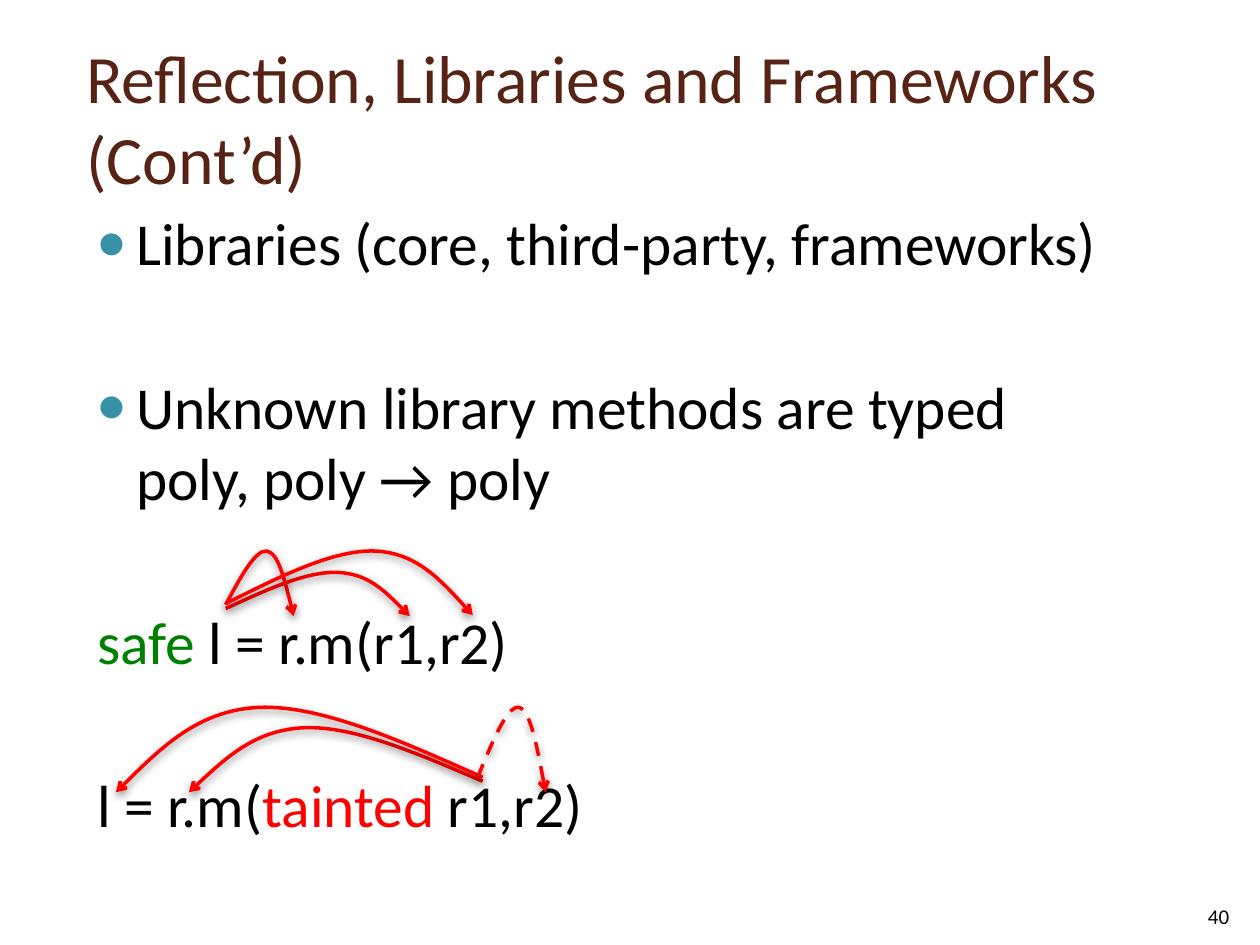
from lxml import etree
from pptx import Presentation
from pptx import util as u
from pptx.dml import color
from pptx.enum import dml, text
from pptx.oxml import ns

RED, GREEN, BLACK = "FF0000", "008000", "000000"
LEFT, WIDE = 1.48, 22.53


def paint(code):
    """Turn a hex string into a colour."""
    return color.RGBColor.from_string(code)


def put(item, vals):
    """Set each attribute of a dict of format values."""
    for key, val in vals.items():
        setattr(item, key, val)


def node(up, tag, **vals):
    """Add a drawing element below another one."""
    return etree.SubElement(up, ns.qn("a:" + tag), {k: str(v) for k, v in vals.items()})


class Deck:
    """Hold the style and the current slide."""

    face = "Calibri"

    def __init__(self):
        """Start a deck with one title-only slide."""
        self.prs = Presentation()
        put(self.prs, {"slide_width": u.Cm(25.4), "slide_height": u.Cm(19.05)})
        self.slide = self.prs.slides.add_slide(self.prs.slide_layouts[5])

    def style(self, run, size, code):
        """Format one run."""
        put(run.font, {"name": self.face, "size": u.Pt(size)})
        run.font.color.rgb = paint(code)

    def title(self, words, box):
        """Fill and place the title."""
        head = self.slide.shapes.title
        put(head, dict(zip(("left", "top", "width", "height"), map(u.Cm, box))))
        put(head.text_frame, {"text": words, "word_wrap": True,
                              "auto_size": text.MSO_AUTO_SIZE.NONE,
                              "vertical_anchor": text.MSO_ANCHOR.MIDDLE})
        para = head.text_frame.paragraphs[0]
        para.alignment = text.PP_ALIGN.LEFT
        self.style(para.runs[0], 38.7, "572314")

    def frame(self, box, **vals):
        """Add a wrapping text box."""
        area = self.slide.shapes.add_textbox(*map(u.Cm, box)).text_frame
        put(area, {"word_wrap": True, **vals})
        return area

    def body(self, items, box):
        """Add the spaced paragraphs, each with or without a bullet."""
        area = self.frame(box)
        for i, (dot, parts) in enumerate(items):
            para = area.add_paragraph() if i else area.paragraphs[0]
            para.space_before = u.Pt(52.7 if i else 6)
            props = para._p.get_or_add_pPr()
            props.set("marL", str(u.Cm(1.02 if dot else 0.23)))
            props.set("indent", str(u.Cm(-0.79 if dot else 0)))
            if dot:
                node(node(props, "buClr"), "srgbClr", val="3891A7")
                node(props, "buSzPct", val=80000)
                node(props, "buFont", typeface=self.face)
                node(props, "buChar", char="●")
            for words, code in parts:
                for j, line in enumerate(words.split("\n")):
                    if j:
                        para.add_line_break()
                    run = para.add_run()
                    run.text = line
                    self.style(run, 34, code)

    def number(self, words, box):
        """Add the slide number."""
        para = self.frame(box, vertical_anchor=text.MSO_ANCHOR.BOTTOM).paragraphs[0]
        put(para, {"text": words, "alignment": text.PP_ALIGN.CENTER})
        self.style(para.runs[0], 12, BLACK)

    def arc(self, start, peak, end, dash=None):
        """Draw a curved arrow that rises to a peak and falls to its end."""
        def mix(a, b, fx, fy):
            return tuple(u.Cm(p + (q - p) * f) for p, q, f in zip(a, b, (fx, fy)))

        rise = [mix(start, peak, *f) for f in ((0.36, 0.51), (0.72, 1.03), (1, 1))]
        fall = [mix(peak, end, *f) for f in ((0.42, 0.03), (0.71, 0.51), (1, 1))]
        pen = self.slide.shapes.build_freeform(*map(u.Cm, start))
        pen.add_line_segments(rise + fall, close=False)
        shape = pen.convert_to_shape()
        shape.fill.background()
        shape.shadow.inherit = False
        shape.line.color.rgb = paint(RED)
        put(shape.line, {"width": u.Pt(2), "dash_style": dash})
        props = shape._element.spPr
        node(props.find(ns.qn("a:ln")), "tailEnd", type="arrow")
        cast = node(props.find(ns.qn("a:effectLst")), "outerShdw", blurRad=u.Pt(5),
                    dist=u.Pt(2), dir=5400000, rotWithShape=0)
        node(node(cast, "srgbClr", val=BLACK), "alpha", val=43000)
        steps = list(props.iter(ns.qn("a:lnTo")))
        track = steps[0].getparent()
        for i in (0, 3):
            curve = node(track, "cubicBezTo")
            for step in steps[i:i + 3]:
                curve.append(step[0])
                track.remove(step)


def main():
    """Build the slide."""
    deck = Deck()
    deck.title("Reflection, Libraries and Frameworks (Cont’d)", (LEFT, 0.76, WIDE, 3.18))
    deck.body([
        (True, [("Libraries (core, third-party, frameworks)", BLACK)]),
        (True, [("Unknown library methods are typed \npoly, poly → poly", BLACK)]),
        (False, [("safe", GREEN), (" l = r.m(r1,r2)", BLACK)]),
        (False, [("l = r.m(", BLACK), ("tainted", RED), (" r1,r2)", BLACK)]),
    ], (LEFT, 4.03, WIDE, 13.34))
    deck.number("40", (23.93, 17.53, 1.27, 1.32))
    for start, peak, end in (
        ((4.55, 12.19), (5.38, 11.11), (5.92, 12.42)),
        ((4.55, 12.27), (6.8, 11.54), (8.26, 12.42)),
        ((4.55, 12.17), (7.56, 11.11), (9.53, 12.4)),
        ((9.73, 15.75), (6.15, 14.67), (3.81, 15.97)),
        ((9.73, 15.67), (5.24, 14.26), (2.34, 15.97)),
    ):
        deck.arc(start, peak, end)
    deck.arc((9.63, 15.67), (10.46, 14.26), (11, 15.97), dml.MSO_LINE.DASH)
    deck.prs.save("out.pptx")


if __name__ == "__main__":
    main()
